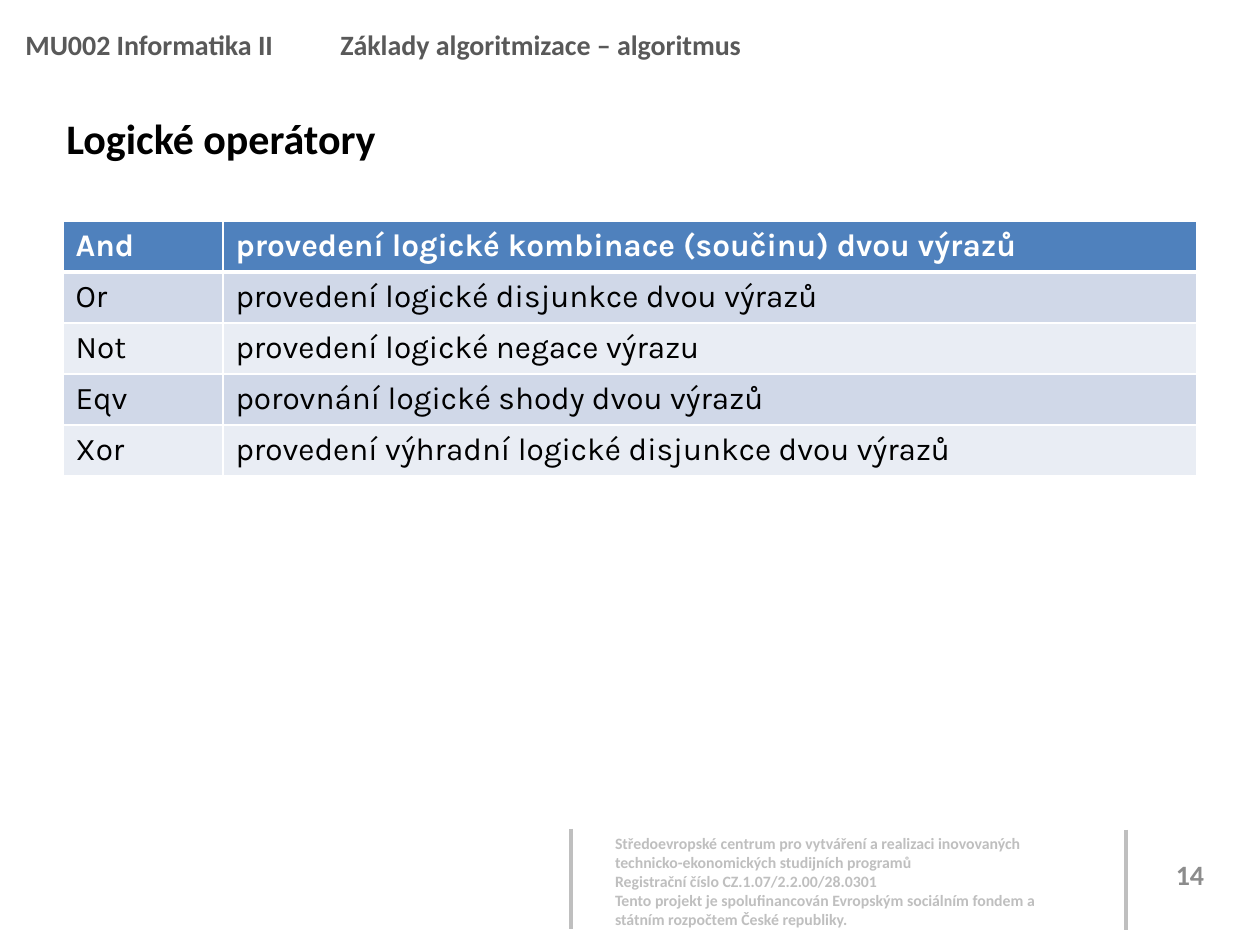
"""Build the slide on logical operators."""
import pptx
import pptx.dml.color
import pptx.enum.shapes
import pptx.enum.text
import pptx.oxml
import pptx.oxml.ns
import pptx.util

PX = 914400 / 126
COLORS = {"text": "000000", "header": "595959", "footer": "BFBFBF", "number": "8C8C8C",
          "white": "FFFFFF", "head": "4F81BD", "odd": "D0D8E8", "even": "E9EDF4"}
ALIGN = pptx.enum.text.PP_ALIGN
ANCHOR = pptx.enum.text.MSO_ANCHOR


def emu(*lengths):
    return [pptx.util.Emu(round(n * PX)) for n in lengths]


def write(tf, text, size, color, bold=True, font="Calibri", align=ALIGN.LEFT, spacing=None):
    for i, line in enumerate(text.split("\n")):
        p = tf.add_paragraph() if i else tf.paragraphs[0]
        p.alignment = align
        p.line_spacing = spacing
        r = p.add_run()
        r.text = line
        r.font.size = pptx.util.Pt(size)
        r.font.name = font
        r.font.bold = bold
        r.font.color.rgb = pptx.dml.color.RGBColor.from_string(COLORS[color])


prs = pptx.Presentation()
prs.slide_width, prs.slide_height = emu(1260, 945)
s = prs.slides.add_slide(prs.slide_layouts[6])

footer = """Středoevropské centrum pro vytváření a realizaci inovovaných technicko-ekonomických studijních programů
Registrační číslo CZ.1.07/2.2.00/28.0301
Tento projekt je spolufinancován Evropským sociálním fondem a státním rozpočtem České republiky."""
boxes = [
    ((610, 829, 446, 106), 5, ANCHOR.TOP, footer, dict(size=9, color="footer")),
    ((1147, 849, 86, 50), None, ANCHOR.MIDDLE, "14",
     dict(size=16, color="number", align=ALIGN.CENTER)),
    ((54, 106, 1160, 63), None, ANCHOR.MIDDLE, "Logické operátory", dict(size=24, color="text")),
    ((13, 5, 1203, 63), None, ANCHOR.TOP,
     "MU002 Informatika II\t\tZáklady algoritmizace – algoritmus",
     dict(size=16, color="header", spacing=1.5)),
]
for place, inset, anchor, text, style in boxes:
    tf = s.shapes.add_textbox(*emu(*place)).text_frame
    tf.word_wrap = True
    tf.vertical_anchor = anchor
    if inset:
        tf.margin_left, tf.margin_top, tf.margin_right, tf.margin_bottom = emu(*[inset] * 4)
    write(tf, text, **style)

for x, top in ((571, 829), (1126, 830)):
    sp = s.shapes.add_connector(pptx.enum.shapes.MSO_CONNECTOR.STRAIGHT,
                                *emu(x, top, x, top + 100))
    sp.line.width = pptx.util.Pt(2)
    sp.line.color.rgb = pptx.dml.color.RGBColor.from_string(COLORS["footer"])
    pptx.oxml.ns.qn("a:effectLst")
    sp._element.spPr.append(pptx.oxml.parse_xml(
        f'<a:effectLst {pptx.oxml.ns.nsdecls("a")}/>'))

operators = [
    ("And", "provedení logické kombinace (součinu) dvou výrazů"),
    ("Or", "provedení logické disjunkce dvou výrazů"),
    ("Not", "provedení logické negace výrazu"),
    ("Eqv", "porovnání logické shody dvou výrazů"),
    ("Xor", "provedení výhradní logické disjunkce dvou výrazů"),
]
table = s.shapes.add_table(len(operators), 2, *emu(63, 221, 1134, 255)).table
for column, width in zip(table.columns, emu(160, 974)):
    column.width = width
for i, row in enumerate(operators):
    table.rows[i].height = emu(51)[0]
    fill = "head" if i == 0 else "odd" if i % 2 else "even"
    widths = {"L": 1, "R": 1, "T": 3 if i == 1 else 1, "B": 3 if i == 0 else 1}
    for j, text in enumerate(row):
        cell = table.cell(i, j)
        tcPr = cell._tc.get_or_add_tcPr()
        for side, width in widths.items():
            tcPr.append(pptx.oxml.parse_xml(
                f'<a:ln{side} {pptx.oxml.ns.nsdecls("a")} w="{pptx.util.Pt(width)}"><a:solidFill>'
                f'<a:srgbClr val="{COLORS["white"]}"/></a:solidFill></a:ln{side}>'))
        cell.fill.solid()
        cell.fill.fore_color.rgb = pptx.dml.color.RGBColor.from_string(COLORS[fill])
        write(cell.text_frame, text, size=18, color="text" if i else "white",
              bold=i == 0, font="Karla")

prs.save("out.pptx")
